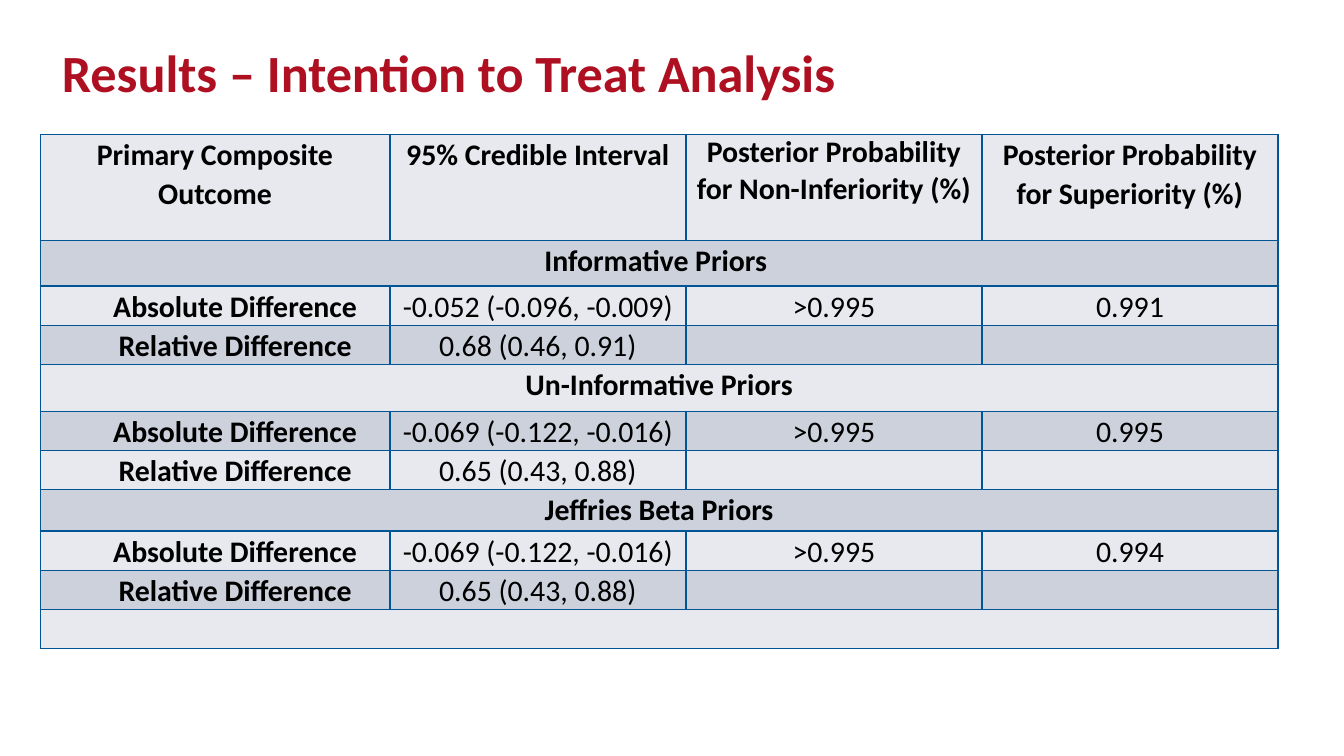
from pptx import Presentation
from pptx.dml.color import RGBColor
from pptx.enum.text import MSO_ANCHOR, MSO_AUTO_SIZE, PP_ALIGN
from pptx.oxml.ns import qn
from pptx.util import Inches, Pt
from lxml.etree import SubElement

FONT = "Calibri"
RED, BLACK, BORDER = "AE1022", "000000", "005694"
BANDS = ("E7E9EE", "CCD1DC")
TEXT_SIZE = 16

# Table grid: a wide label column, then three equal ones
TABLE_WIDTH, LABEL_WIDTH = 9.21, 2.6
COLUMN_WIDTHS = [LABEL_WIDTH] + [(TABLE_WIDTH - LABEL_WIDTH) / 3] * 3
HEADER_HEIGHT, LINE_HEIGHT = 0.79, 0.29
HEADERS = (
    "Primary Composite Outcome",
    "95% Credible Interval",
    "Posterior Probability for Non-Inferiority (%)",
    "Posterior Probability for Superiority (%)",
)
# Prior, row height, absolute interval, relative interval, superiority
PRIORS = (
    ("Informative Priors ", 0.34, "-0.052 (-0.096, -0.009)", "0.68 (0.46, 0.91)", "0.991"),
    ("Un-Informative Priors", 0.35, "-0.069 (-0.122, -0.016)", "0.65 (0.43, 0.88)", "0.995"),
    ("Jeffries Beta Priors", 0.31, "-0.069 (-0.122, -0.016)", "0.65 (0.43, 0.88)", "0.994"),
)


def color(value):
    return RGBColor.from_string(value)


def write(frame, text, size=TEXT_SIZE, bold=True, fill=BLACK,
          align=PP_ALIGN.CENTER, spacing=1.07, after=8):
    paragraph = frame.paragraphs[0]
    paragraph.alignment = align
    paragraph.line_spacing = spacing
    paragraph.space_before = Pt(0)
    paragraph.space_after = Pt(after)
    run = paragraph.add_run()
    run.text = text
    run.font.name, run.font.size, run.font.bold = FONT, Pt(size), bold
    run.font.color.rgb = color(fill)


def set_borders(cell):
    properties = cell._tc.get_or_add_tcPr()
    for position, side in enumerate(("lnL", "lnR", "lnT", "lnB")):
        line = properties.makeelement(qn(f"a:{side}"), {"w": str(Pt(1))})
        solid = SubElement(line, qn("a:solidFill"))
        SubElement(solid, qn("a:srgbClr"), val=BORDER)
        properties.insert(position, line)


def style_cell(cell, fill):
    cell.margin_left = cell.margin_right = Inches(0.05)
    cell.margin_top = cell.margin_bottom = 0
    cell.fill.solid()
    cell.fill.fore_color.rgb = color(fill)
    set_borders(cell)


def table_rows():
    """Give each row as height, texts; a single text spans the row."""
    rows = [(HEADER_HEIGHT, HEADERS)]
    for prior, height, absolute, relative, superiority in PRIORS:
        rows += [
            (height, (prior,)),
            (LINE_HEIGHT, ("Absolute Difference", absolute, ">0.995", superiority)),
            (LINE_HEIGHT, ("Relative Difference", relative, "", "")),
        ]
    return rows + [(LINE_HEIGHT, ("",))]


def add_title(slide, text):
    title = slide.shapes.title
    title.left, title.top = Inches(0.36), Inches(0.36)
    title.width, title.height = Inches(8.35), Inches(0.47)
    frame = title.text_frame
    frame.word_wrap = True
    frame.auto_size = MSO_AUTO_SIZE.NONE
    frame.vertical_anchor = MSO_ANCHOR.MIDDLE
    write(frame, text, size=28, fill=RED, align=PP_ALIGN.LEFT,
          spacing=Pt(25), after=0)


def add_results_table(slide):
    rows = table_rows()
    total_height = sum(height for height, _ in rows)
    table = slide.shapes.add_table(
        len(rows), len(COLUMN_WIDTHS), Inches(0.3), Inches(1),
        Inches(TABLE_WIDTH), Inches(total_height)).table
    for column, width in zip(table.columns, COLUMN_WIDTHS):
        column.width = Inches(width)

    for index, (height, texts) in enumerate(rows):
        table.rows[index].height = Inches(height)
        cells = list(table.rows[index].cells)
        for cell in cells:
            style_cell(cell, BANDS[index % 2])
        if len(texts) == 1:
            cells[0].merge(cells[-1])
        for position, cell in enumerate(cells):
            text = texts[position] if position < len(texts) else ""
            if not text:
                # Keep empty cells as low as the text rows
                SubElement(cell.text_frame.paragraphs[0]._p,
                           qn("a:endParaRPr"), sz=str(TEXT_SIZE * 100))
                continue
            if text.endswith(" Difference"):
                cell.margin_left = Inches(0.35)
            single_spaced = "Non-Inferiority" in text
            write(cell.text_frame, text,
                  bold=index == 0 or position == 0,
                  spacing=1.0 if single_spaced else 1.07,
                  after=0 if single_spaced else 8)


def main():
    presentation = Presentation()
    # Widescreen, 16 to 9
    presentation.slide_width = Inches(10)
    presentation.slide_height = presentation.slide_width * 9 // 16
    slide = presentation.slides.add_slide(presentation.slide_layouts[5])
    add_title(slide, "Results – Intention to Treat Analysis")
    add_results_table(slide)
    presentation.save("out.pptx")


if __name__ == "__main__":
    main()
